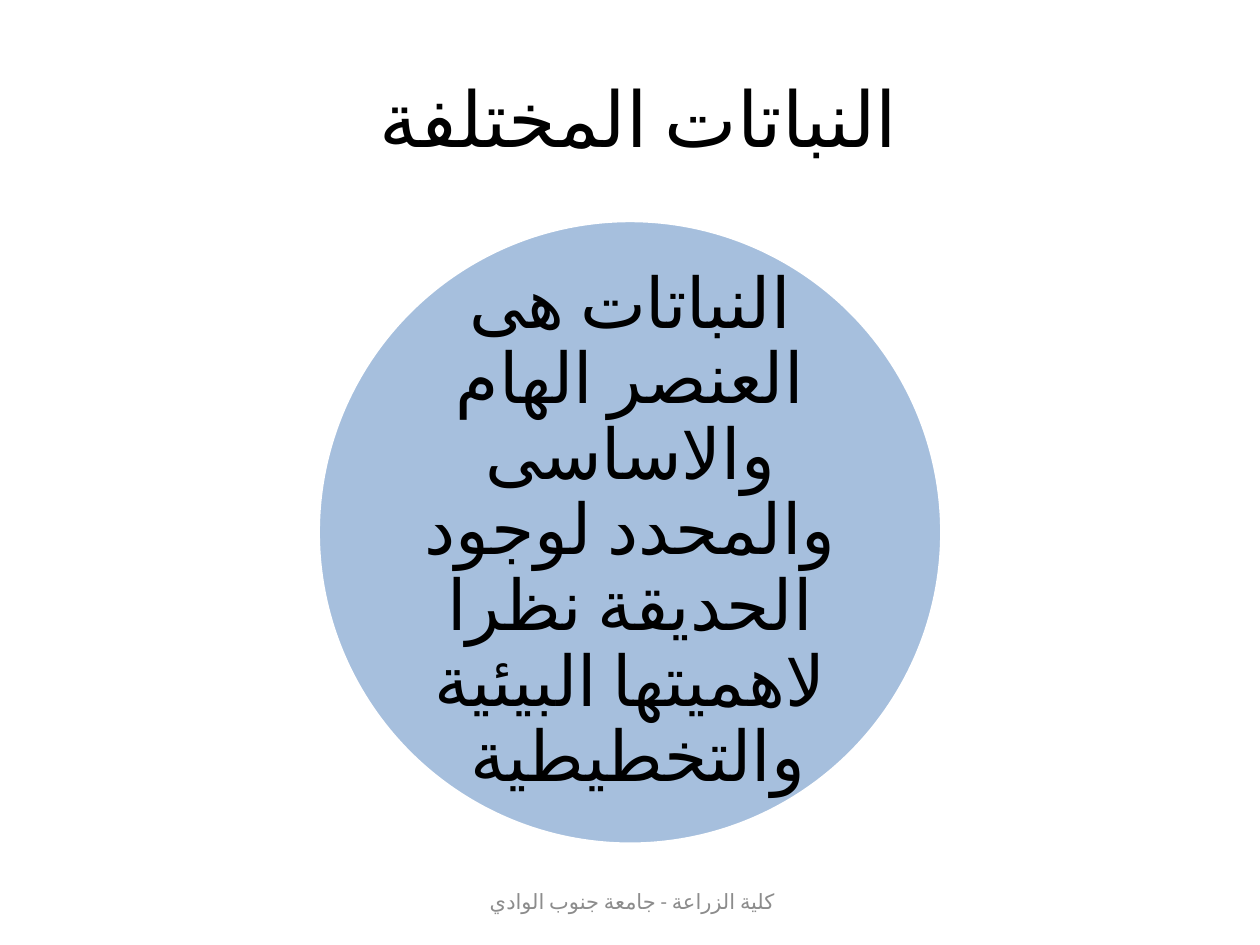
import pptx
import pptx.util
import pptx.dml.color
import pptx.enum.lang
import pptx.enum.shapes
import pptx.enum.text
import pptx.oxml
import pptx.oxml.ns
from dataclasses import dataclass

Pt = pptx.util.Pt
RGB = pptx.dml.color.RGBColor.from_string

TITLE = "النباتات المختلفة "
BODY = "النباتات هى العنصر الهام والاساسى والمحدد لوجود الحديقة نظرا لاهميتها البيئية والتخطيطية "
FOOTER = "كلية الزراعة - جامعة جنوب الوادي "


@dataclass(frozen=True)
class Theme:
    font: str = "Calibri"
    ink: str = "000000"
    muted: str = "8C8C8C"
    disc: str = "4F81BD"
    edge: str = "FFFFFF"
    alpha: int = 50
    title: int = 44
    body: int = 40
    small: int = 12


theme = Theme()
WIDE, HIGH = 720, 540
DISC, DISC_TOP = 356.4, 126
INNER = 252


def make_node(tag, **attrs):
    pairs = " ".join(f'{key}="{value}"' for key, value in attrs.items())
    return pptx.oxml.parse_xml(f'<a:{tag} {pptx.oxml.ns.nsdecls("a")} {pairs}/>')


def add_text(slide, text, box, size, color=theme.ink, inset=None, spacing=None):
    frame = slide.shapes.add_textbox(*map(Pt, box)).text_frame
    frame.word_wrap = True
    frame.vertical_anchor = pptx.enum.text.MSO_ANCHOR.MIDDLE
    if inset is not None:
        frame.margin_left = frame.margin_right = Pt(inset)
        frame.margin_top = frame.margin_bottom = Pt(inset)
    para = frame.paragraphs[0]
    para.alignment = pptx.enum.text.PP_ALIGN.CENTER
    para.line_spacing = spacing
    para._p.get_or_add_pPr().set("rtl", "1")
    run = para.add_run()
    run.text = text
    run.font.name = theme.font
    run.font.size = Pt(size)
    run.font.color.rgb = RGB(color)
    run.font.language_id = pptx.enum.lang.MSO_LANGUAGE_ID.ARABIC_EGYPT
    run._r.get_or_add_rPr().append(make_node("cs", typeface=theme.font))


def add_disc(slide, box):
    disc = slide.shapes.add_shape(pptx.enum.shapes.MSO_SHAPE.OVAL, *map(Pt, box))
    disc.shadow.inherit = False
    disc.fill.solid()
    disc.fill.fore_color.rgb = RGB(theme.disc)
    disc.line.color.rgb = RGB(theme.edge)
    disc.line.width = Pt(2)
    tint = disc._element.spPr.find(pptx.oxml.ns.qn("a:solidFill"))[0]
    tint.append(make_node("alpha", val=theme.alpha * 1000))


def main():
    """Build the plants slide and save it."""
    deck = pptx.Presentation()
    deck.slide_width, deck.slide_height = Pt(WIDE), Pt(HIGH)
    slide = deck.slides.add_slide(deck.slide_layouts[6])

    add_text(slide, TITLE, (36, 21.6, WIDE - 72, 90), theme.title)
    add_disc(slide, ((WIDE - DISC) / 2, DISC_TOP, DISC, DISC))
    inner_top = DISC_TOP + (DISC - INNER) / 2
    add_text(slide, BODY, ((WIDE - INNER) / 2, inner_top, INNER, INNER),
             theme.body, inset=0, spacing=0.9)
    add_text(slide, FOOTER, ((WIDE - 228) / 2, 500.5, 228, 28.75), theme.small, color=theme.muted)

    deck.save("out.pptx")


if __name__ == "__main__":
    main()
